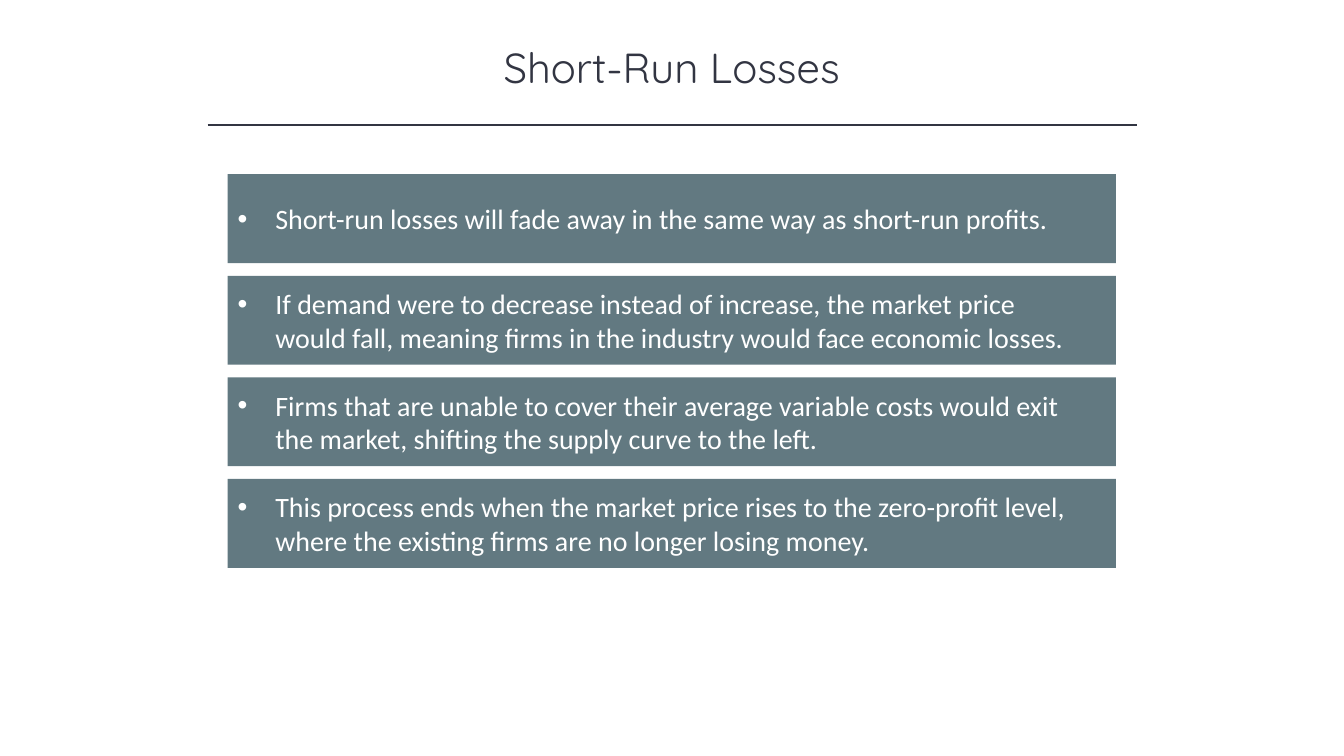
"""Build the Short-Run Losses slide."""
from dataclasses import dataclass

from lxml import etree
from pptx import Presentation
from pptx.dml.color import RGBColor
from pptx.enum.shapes import MSO_CONNECTOR, MSO_SHAPE
from pptx.enum.text import MSO_ANCHOR, PP_ALIGN
from pptx.oxml.ns import qn
from pptx.slide import Slide
from pptx.text.text import _Paragraph
from pptx.util import Cm, Pt

INK = RGBColor(0x32, 0x35, 0x42)
SLATE = RGBColor(0x62, 0x79, 0x81)
WHITE = RGBColor(0xFF, 0xFF, 0xFF)
RECT = MSO_SHAPE.RECTANGLE
STRAIGHT = MSO_CONNECTOR.STRAIGHT
MIDDLE = MSO_ANCHOR.MIDDLE
LEFT = PP_ALIGN.LEFT
CENTER = PP_ALIGN.CENTER

CARD_LEFT, CARD_TOP = 5.74, 4.39
CARD_WIDTH, CARD_HEIGHT = 22.38, 2.24
CARD_STEP = 2.56
HANG = Cm(0.95)


@dataclass
class Card:
    text: str
    top: float


POINTS = (
    "Short-run losses will fade away in the same way as short-run profits.",
    "If demand were to decrease instead of increase, the market price would fall, "
    "meaning firms in the industry would face economic losses.",
    "Firms that are unable to cover their average variable costs would exit the market, "
    "shifting the supply curve to the left.",
    "This process ends when the market price rises to the zero-profit level, "
    "where the existing firms are no longer losing money.",
)
CARDS = [Card(text, CARD_TOP + i * CARD_STEP) for i, text in enumerate(POINTS)]


def add_run(para: _Paragraph, text: str, font: str, size: int, color: RGBColor) -> None:
    run = para.add_run()
    run.text = text
    run.font.name = font
    run.font.size = Pt(size)
    run.font.color.rgb = color


def add_bullet(para: _Paragraph) -> None:
    props = para._p.get_or_add_pPr()
    props.set("marL", str(HANG))
    props.set("indent", str(-HANG))
    etree.SubElement(props, qn("a:buFont")).set("typeface", "Arial")
    etree.SubElement(props, qn("a:buChar")).set("char", "•")


def add_title(slide: Slide, text: str) -> None:
    box = slide.shapes.add_textbox(Cm(4.23), Cm(0.91), Cm(25.4), Cm(1.55))
    box.text_frame.word_wrap = True
    para = box.text_frame.paragraphs[0]
    para.alignment = CENTER
    add_run(para, text, "Quicksand", 30, INK)


def add_rule(slide: Slide) -> None:
    rule = slide.shapes.add_connector(STRAIGHT, Cm(5.23), Cm(3.15), Cm(28.65), Cm(3.15))
    rule.line.color.rgb = INK
    rule.line.width = Pt(1)
    etree.SubElement(rule._element.spPr, qn("a:effectLst"))


def add_card(slide: Slide, card: Card) -> None:
    shape = slide.shapes.add_shape(
        RECT, Cm(CARD_LEFT), Cm(card.top), Cm(CARD_WIDTH), Cm(CARD_HEIGHT)
    )
    shape.shadow.inherit = False
    shape.fill.solid()
    shape.fill.fore_color.rgb = SLATE
    shape.line.fill.background()
    frame = shape.text_frame
    frame.word_wrap = True
    frame.vertical_anchor = MIDDLE
    frame.margin_right = Cm(0.94)
    para = frame.paragraphs[0]
    para.alignment = LEFT
    add_bullet(para)
    add_run(para, card.text, "Calibri", 20, WHITE)


def main() -> None:
    deck = Presentation()
    deck.slide_width, deck.slide_height = Cm(33.87), Cm(19.05)
    slide = deck.slides.add_slide(deck.slide_layouts[6])
    add_title(slide, "Short-Run Losses")
    add_rule(slide)
    for card in CARDS:
        add_card(slide, card)
    deck.save("out.pptx")


if __name__ == "__main__":
    main()
